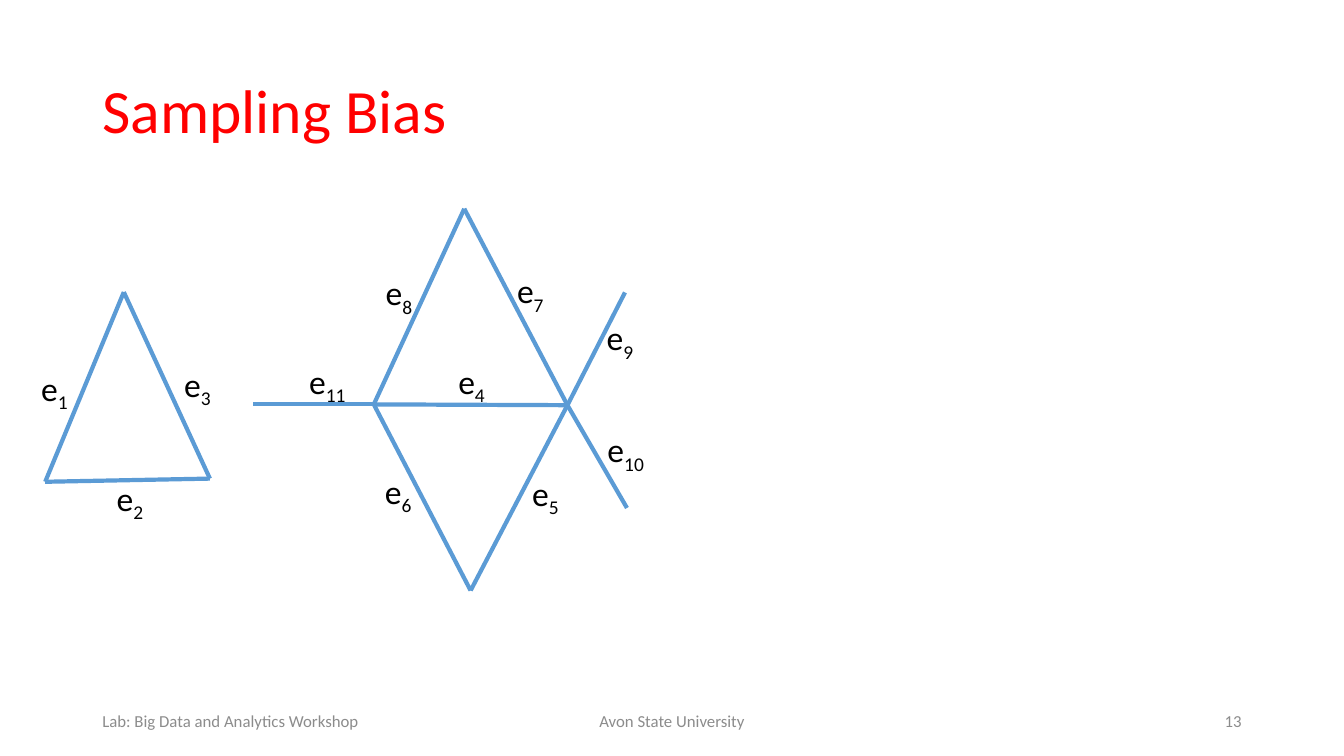
from lxml.etree import SubElement
from pptx import Presentation
from pptx.dml.color import RGBColor
from pptx.enum.shapes import MSO_CONNECTOR
from pptx.enum.text import MSO_ANCHOR, MSO_AUTO_SIZE, PP_ALIGN
from pptx.oxml.ns import qn
from pptx.util import Cm, Pt

COLORS = {"title": "FF0000", "edge": "5B9BD5", "label": "000000", "footer": "8C8C8C"}
FONTS = {
    "title": {"name": "Calibri", "size": Pt(44)},
    "label": {"name": "Calibri", "size": Pt(24)},
    "footer": {"name": "Calibri", "size": Pt(12)},
}

TRIANGLE = {
    "nodes": {"apex": (1.98, 0), "left": (0, 4.78), "right": (4.15, 4.7)},
    "edges": [
        ("apex", "left", "1", (-0.35, 1.78)),
        ("left", "right", "2", (1.55, 4.55)),
        ("apex", "right", "3", (3.25, 1.68)),
    ],
}
DIAMOND = {
    "nodes": {
        "tail": (0, 4.93), "left": (3.04, 4.93), "right": (7.92, 4.95),
        "top": (5.32, 0), "bottom": (5.48, 9.62),
        "upper": (9.37, 2.11), "lower": (9.42, 7.54),
    },
    "edges": [
        ("left", "right", "4", (4.92, 3.71)),
        ("right", "bottom", "5", (6.78, 6.53)),
        ("left", "bottom", "6", (3.07, 6.47)),
        ("top", "right", "7", (6.4, 1.42)),
        ("left", "top", "8", (3.09, 1.47)),
        ("right", "upper", "9", (8.66, 2.61)),
        ("right", "lower", "10", (8.68, 5.43)),
        ("tail", "left", "11", (1.16, 3.71)),
    ],
}


def set_attrs(obj, values):
    """Set each named attribute on an object."""
    for name, value in values.items():
        setattr(obj, name, value)


def add_run(p, text, style):
    """Append a run in the given style."""
    r = p.add_run()
    r.text = text
    set_attrs(r.font, FONTS[style])
    r.font.color.rgb = RGBColor.from_string(COLORS[style])
    return r


def add_title(s, text, left, top, width, height):
    """Place and format the title placeholder."""
    sp = s.shapes.title
    set_attrs(sp, {"left": Cm(left), "top": Cm(top), "width": Cm(width), "height": Cm(height)})
    tf = sp.text_frame
    set_attrs(tf, {"auto_size": MSO_AUTO_SIZE.NONE, "vertical_anchor": MSO_ANCHOR.MIDDLE,
                   "word_wrap": True})
    p = tf.paragraphs[0]
    set_attrs(p, {"alignment": PP_ALIGN.LEFT, "line_spacing": 0.9})
    add_run(p, text, "title")


def add_edge(s, x1, y1, x2, y2):
    """Draw one graph edge."""
    sp = s.shapes.add_connector(MSO_CONNECTOR.STRAIGHT, Cm(x1), Cm(y1), Cm(x2), Cm(y2))
    sp.line.color.rgb = RGBColor.from_string(COLORS["edge"])
    sp.line.width = Pt(3)
    SubElement(sp._element.spPr, qn("a:effectLst"))


def add_label(s, index, left, top):
    """Write an edge name with its subscript index."""
    width = 1.22 if len(index) == 1 else 1.52
    tf = s.shapes.add_textbox(Cm(left), Cm(top), Cm(width), Cm(1.27)).text_frame
    set_attrs(tf, {"word_wrap": False, "auto_size": MSO_AUTO_SIZE.SHAPE_TO_FIT_TEXT})
    p = tf.paragraphs[0]
    add_run(p, "e", "label")
    r = add_run(p, index, "label")
    r.font._element.set("baseline", "-25000")


def add_graph(s, graph, left, top):
    """Draw the edges and labels of a graph from its top left corner."""
    nodes = {name: (left + x, top + y) for name, (x, y) in graph["nodes"].items()}
    for start, end, _, _ in graph["edges"]:
        add_edge(s, *nodes[start], *nodes[end])
    for _, _, index, (dx, dy) in graph["edges"]:
        add_label(s, index, left + dx, top + dy)


def add_footer(s, left, top, width, height):
    """Place the event, the institution and the page number in one row."""
    parts = [
        ("Lab: Big Data and Analytics Workshop", 0, 7.62, PP_ALIGN.LEFT),
        ("Avon State University", (width - 11.43) / 2, 11.43, PP_ALIGN.CENTER),
        ("13", width - 7.62, 7.62, PP_ALIGN.RIGHT),
    ]
    for text, dx, part_width, alignment in parts:
        tf = s.shapes.add_textbox(Cm(left + dx), Cm(top), Cm(part_width), Cm(height)).text_frame
        set_attrs(tf, {"word_wrap": True, "vertical_anchor": MSO_ANCHOR.MIDDLE})
        p = tf.paragraphs[0]
        p.alignment = alignment
        add_run(p, text, "footer")


def main():
    """Build and save the slide."""
    prs = Presentation()
    set_attrs(prs, {"slide_width": Cm(33.87), "slide_height": Cm(19.05)})
    s = prs.slides.add_slide(prs.slide_layouts[5])
    add_title(s, "Sampling Bias", 2.33, 1.01, 29.21, 3.68)
    add_graph(s, TRIANGLE, 1.14, 7.36)
    add_graph(s, DIAMOND, 6.38, 5.26)
    add_footer(s, 2.33, 17.66, 29.21, 1.01)
    prs.save("out.pptx")


if __name__ == "__main__":
    main()
